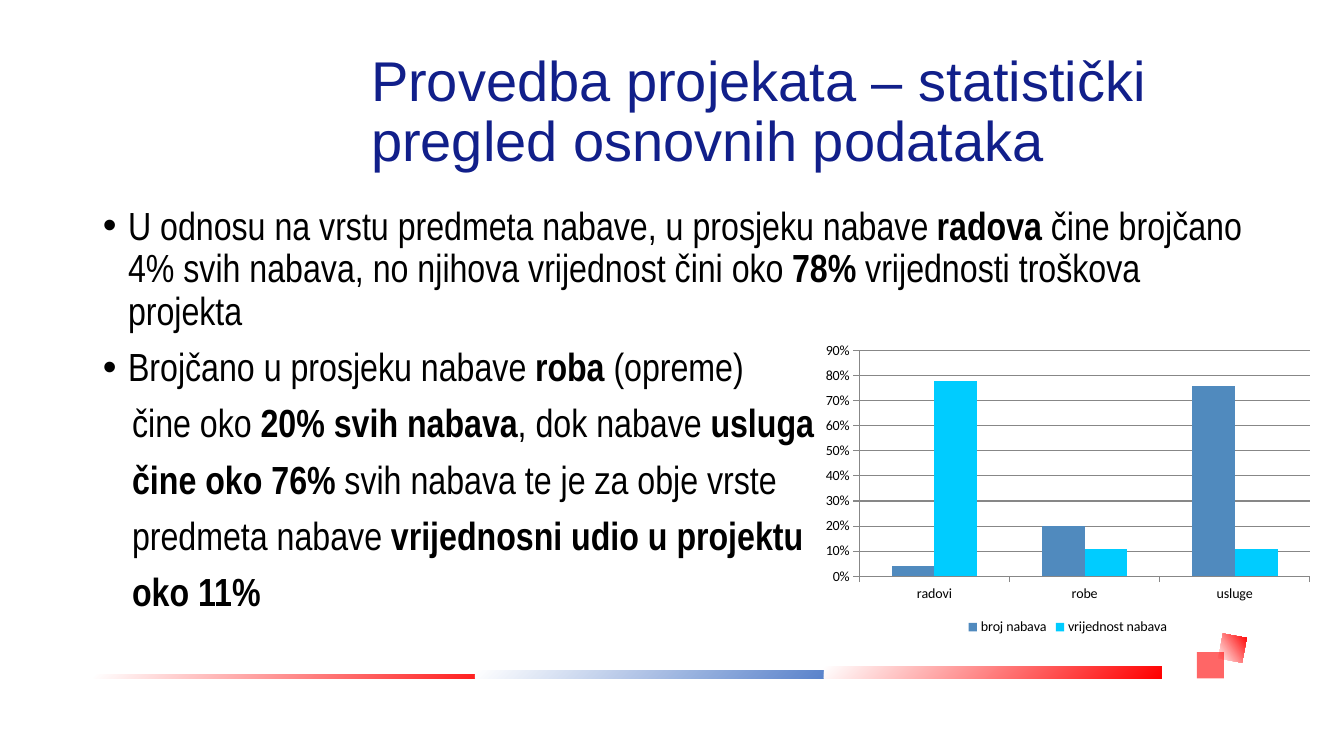
import pptx
import pptx.chart.data
import pptx.dml.color
import pptx.enum.chart
import pptx.enum.shapes
import pptx.enum.text
import pptx.oxml
import pptx.oxml.ns
import pptx.util
from lxml import etree

Inches, Pt = pptx.util.Inches, pptx.util.Pt
RGB = pptx.dml.color.RGBColor
NAVY, BLACK, WHITE = RGB(0x11, 0x1F, 0x8A), RGB(0, 0, 0), RGB(255, 255, 255)
RED, BLUE, GREY = RGB(255, 0, 0), RGB(0x44, 0x72, 0xC4), RGB(0x87, 0x87, 0x87)
STEEL, CYAN = RGB(0x50, 0x8A, 0xBE), RGB(0, 0xCC, 0xFF)

# Content: each line is (has bullet, [(text, bold), ...])
TITLE = "Provedba projekata – statistički pregled osnovnih podataka"
LINES = [
    (True, [("U odnosu na vrstu predmeta nabave, u prosjeku nabave ", False),
            ("radova", True),
            (" čine brojčano 4% svih nabava, no njihova vrijednost čini oko ", False),
            ("78%", True), (" vrijednosti troškova projekta", False)]),
    (True, [("Brojčano u prosjeku nabave ", False), ("roba", True),
            (" (opreme)", False)]),
    (False, [("čine oko ", False), ("20% svih nabava", True),
             (", dok nabave ", False), ("usluga", True)]),
    (False, [("čine oko 76% ", True),
             ("svih nabava te je za obje vrste", False)]),
    (False, [("predmeta nabave ", False),
             ("vrijednosni udio u projektu", True)]),
    (False, [("oko 11%", True)]),
]
CATS = ["radovi", "robe", "usluge"]
SERIES = [("broj nabava", [0.04, 0.2, 0.76], STEEL),
          ("vrijednost nabava", [0.78, 0.11, 0.11], CYAN)]
# Fading blocks: left, top, width, height, turn, end colour
FADES = [(12.1, 6.31, 0.25, 0.24, 280.6, RED),
         (0.93, 6.69, 4.33, 0.04, 0, RED),
         (4.71, 6.65, 3.94, 0.08, 0, BLUE),
         (8.17, 6.61, 3.35, 0.12, 0, RED)]
SQUARE = (11.87, 6.47, 0.27, 0.26)

deck = pptx.Presentation()
deck.slide_width, deck.slide_height = Inches(13.33), Inches(7.5)
slide = deck.slides.add_slide(deck.slide_layouts[1])


def place(shape, *box):
    shape.left, shape.top, shape.width, shape.height = map(Inches, box)


def block(*box):
    shape = slide.shapes.add_shape(
        pptx.enum.shapes.MSO_SHAPE.RECTANGLE, *map(Inches, box))
    shape.shadow.inherit = False
    shape.line.fill.background()
    return shape


def style(font, name, size, color):
    font.name, font.size, font.color.rgb = name, Pt(size), color


# Decoration
for *box, turn, color in FADES:
    fade = block(*box)
    fade.rotation = turn
    fade.fill.gradient()
    fade.fill.gradient_angle = 315
    for stop, tone, spot in zip(fade.fill.gradient_stops, (WHITE, color), (0, 1)):
        stop.color.rgb, stop.position = tone, spot
square = block(*SQUARE)
square.fill.solid()
square.fill.fore_color.rgb = RED
tint = square.fill._xPr.find(".//" + pptx.oxml.ns.qn("a:srgbClr"))
etree.SubElement(tint, pptx.oxml.ns.qn("a:alpha"), val="60000")

# Title
title = slide.shapes.title
place(title, 3.58, 0.4, 8.83, 1.45)
title.text_frame.text = TITLE
title.text_frame.auto_size = pptx.enum.text.MSO_AUTO_SIZE.NONE
title.text_frame.vertical_anchor = pptx.enum.text.MSO_ANCHOR.MIDDLE
head = title.text_frame.paragraphs[0]
head.alignment = pptx.enum.text.PP_ALIGN.LEFT
head.line_spacing = 0.9
style(head.font, "Arial", 40, NAVY)

# Body list
body = slide.placeholders[1]
place(body, 0.92, 2, 11.5, 4.76)
frame = body.text_frame
frame.auto_size = pptx.enum.text.MSO_AUTO_SIZE.NONE
for i, (dot, runs) in enumerate(LINES):
    para = frame.paragraphs[0] if i == 0 else frame.add_paragraph()
    props = para._p.get_or_add_pPr()
    props.set("marL", str(Inches(0.25 if dot else 0.29)))
    props.set("indent", str(Inches(-0.25 if dot else 0)))
    if dot:
        etree.SubElement(props, pptx.oxml.ns.qn("a:buFont"), typeface="Arial")
        etree.SubElement(props, pptx.oxml.ns.qn("a:buChar"), char="•")
    else:
        etree.SubElement(props, pptx.oxml.ns.qn("a:buNone"))
    para.line_spacing = 0.9
    para.space_before = Pt(10 if i else 0)
    style(para.font, "Arial Narrow", 28, BLACK)
    for text, bold in runs:
        run = para.add_run()
        run.text, run.font.bold = text, bold

# Chart
data = pptx.chart.data.CategoryChartData(number_format="0%")
data.categories = CATS
for name, vals, _ in SERIES:
    data.add_series(name, vals)
chart = slide.shapes.add_chart(
    pptx.enum.chart.XL_CHART_TYPE.COLUMN_CLUSTERED,
    *map(Inches, (8.09, 3.34, 5, 3)), data).chart
style(chart.font, "Calibri", 10, BLACK)
chart.has_title = False
chart.has_legend = True
chart.legend.position = pptx.enum.chart.XL_LEGEND_POSITION.BOTTOM
chart.legend.include_in_layout = False
plot = chart.plots[0]
plot.gap_width, plot.overlap, plot.vary_by_categories = 150, 0, False
for bars, (_, _, color) in zip(plot.series, SERIES):
    bars.format.fill.solid()
    bars.format.fill.fore_color.rgb = color
axis = chart.value_axis
axis.minimum_scale, axis.maximum_scale, axis.major_unit = 0, 0.9, 0.1
axis.tick_labels.number_format = "0%"
axis.tick_labels.number_format_is_linked = False
axis.has_major_gridlines = True
for item in (axis, chart.category_axis):
    item.major_tick_mark = pptx.enum.chart.XL_TICK_MARK.OUTSIDE
for item in (axis, chart.category_axis, axis.major_gridlines):
    item.format.line.color.rgb = GREY
    item.format.line.width = Pt(0.75)

deck.save("out.pptx")
